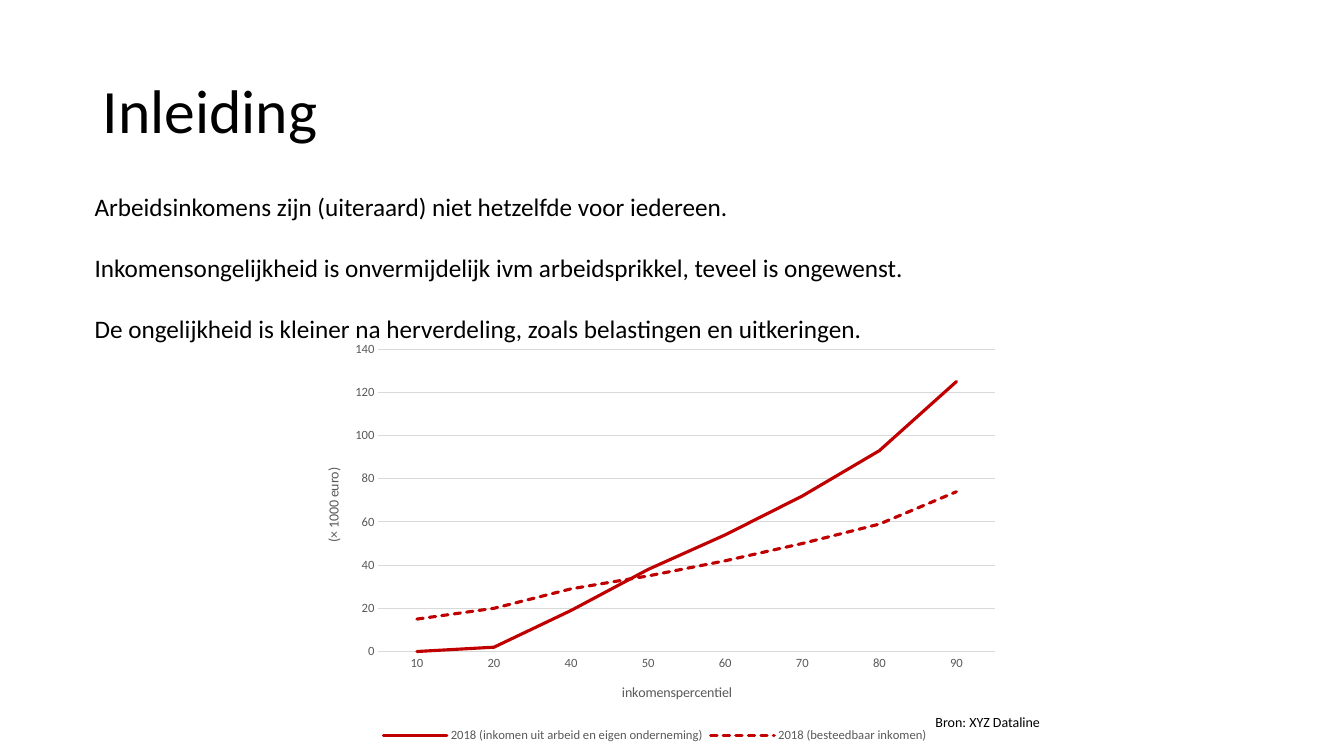
"""Build the slide 'Inleiding' with an income line chart."""
from collections import namedtuple

from lxml.etree import SubElement
from pptx import Presentation
from pptx.chart.data import CategoryChartData
from pptx.dml.color import RGBColor
from pptx.enum.chart import XL_CHART_TYPE, XL_LEGEND_POSITION, XL_MARKER_STYLE, XL_TICK_MARK
from pptx.enum.dml import MSO_LINE
from pptx.enum.text import MSO_ANCHOR
from pptx.oxml.ns import qn
from pptx.util import Inches, Pt

Theme = namedtuple("Theme", "font ink gray grid red head body note tick thin thick")
theme = Theme(
    font="Calibri",
    ink=RGBColor(0x00, 0x00, 0x00),
    gray=RGBColor(0x59, 0x59, 0x59),
    grid=RGBColor(0xD9, 0xD9, 0xD9),
    red=RGBColor(0xC0, 0x00, 0x00),
    head=Pt(44), body=Pt(18), note=Pt(10), tick=Pt(9),
    thin=Pt(0.75), thick=Pt(2.25),
)


def style(font, size, color):
    """Set face, size and colour of a font."""
    font.name, font.size, font.bold = theme.font, size, False
    font.color.rgb = color


def place(part, index, **spots):
    """Give a chart part a fixed place, as shares of the chart."""
    for old in part.findall(qn("c:layout")):
        part.remove(old)
    layout = SubElement(part, qn("c:layout"))
    part.insert(index, layout)
    manual = SubElement(layout, qn("c:manualLayout"))
    if "w" in spots:
        SubElement(manual, qn("c:layoutTarget")).set("val", "inner")
    for side in "xy":
        SubElement(manual, qn(f"c:{side}Mode")).set("val", "edge")
    for side, share in spots.items():
        SubElement(manual, qn(f"c:{side}")).set("val", str(share))


deck = Presentation()
deck.slide_width, deck.slide_height = Inches(13.33), Inches(7.5)
slide = deck.slides.add_slide(deck.slide_layouts[6])

points = [
    "Arbeidsinkomens zijn (uiteraard) niet hetzelfde voor iedereen.",
    "Inkomensongelijkheid is onvermijdelijk ivm arbeidsprikkel, teveel is ongewenst.",
    "De ongelijkheid is kleiner na herverdeling, zoals belastingen en uitkeringen.",
]

data = CategoryChartData()
data.categories = ["10", "20", "40", "50", "60", "70", "80", "90"]
data.add_series("2018 (inkomen uit arbeid en eigen onderneming)", [0, 2, 19, 38, 54, 72, 93, 125])
data.add_series("2018 (besteedbaar inkomen)", [15, 20, 29, 35, 42, 50, 59, 74])
chart = slide.shapes.add_chart(
    XL_CHART_TYPE.LINE, Inches(2.98), Inches(3.3), Inches(7.03), Inches(4.11), data
).chart
chart.has_title = False
style(chart.font, theme.note, theme.gray)
place(chart.element.xpath("c:chart/c:plotArea")[0], 0, x=0.11, y=0.04, w=0.87, h=0.73)

chart.has_legend = True
chart.legend.position = XL_LEGEND_POSITION.BOTTOM
chart.legend.include_in_layout = False
style(chart.legend.font, theme.tick, theme.gray)

across, upright = chart.category_axis, chart.value_axis
for axis, label, x, y in [
    (across, "inkomenspercentiel", 0.45, 0.84),
    (upright, "(× 1000 euro)", 0.03, 0.32),
]:
    axis.major_tick_mark = axis.minor_tick_mark = XL_TICK_MARK.NONE
    style(axis.tick_labels.font, theme.tick, theme.gray)
    frame = axis.axis_title.text_frame
    frame.text = label
    style(frame.paragraphs[0].font, theme.note, theme.gray)
    place(axis.axis_title.element, 1, x=x, y=y)
upright.axis_title.element.find(".//" + qn("a:bodyPr")).set("rot", "-5400000")
upright.minimum_scale, upright.maximum_scale, upright.major_unit = 0, 140, 20
upright.format.line.fill.background()
for line in (across.format.line, upright.major_gridlines.format.line):
    line.color.rgb, line.width = theme.grid, theme.thin

for series, dash in zip(chart.plots[0].series, (MSO_LINE.SOLID, MSO_LINE.SQUARE_DOT)):
    series.smooth = False
    series.marker.style = XL_MARKER_STYLE.NONE
    line = series.format.line
    line.color.rgb, line.width, line.dash_style = theme.red, theme.thick, dash
for stroke in chart.element.xpath(".//c:ser/c:spPr/a:ln"):
    stroke.set("cap", "rnd")

for lines, left, top, width, height, size, anchor in [
    (["Inleiding"], 0.92, 0.4, 11.5, 1.45, theme.head, MSO_ANCHOR.MIDDLE),
    (points, 0.84, 1.85, 11.76, 1.62, theme.body, MSO_ANCHOR.TOP),
    (["Bron: XYZ Dataline"], 9.18, 7.03, 2.25, 0.27, theme.note, MSO_ANCHOR.TOP),
]:
    box = slide.shapes.add_textbox(Inches(left), Inches(top), Inches(width), Inches(height))
    frame = box.text_frame
    frame.word_wrap, frame.vertical_anchor = True, anchor
    frame.text = "\n".join(lines)
    for row, par in enumerate(frame.paragraphs):
        style(par.font, size, theme.ink)
        par.space_before = Pt(22 if row else 0)
        par.line_spacing = 0.9 if size == theme.head else 1.0

deck.save("out.pptx")
